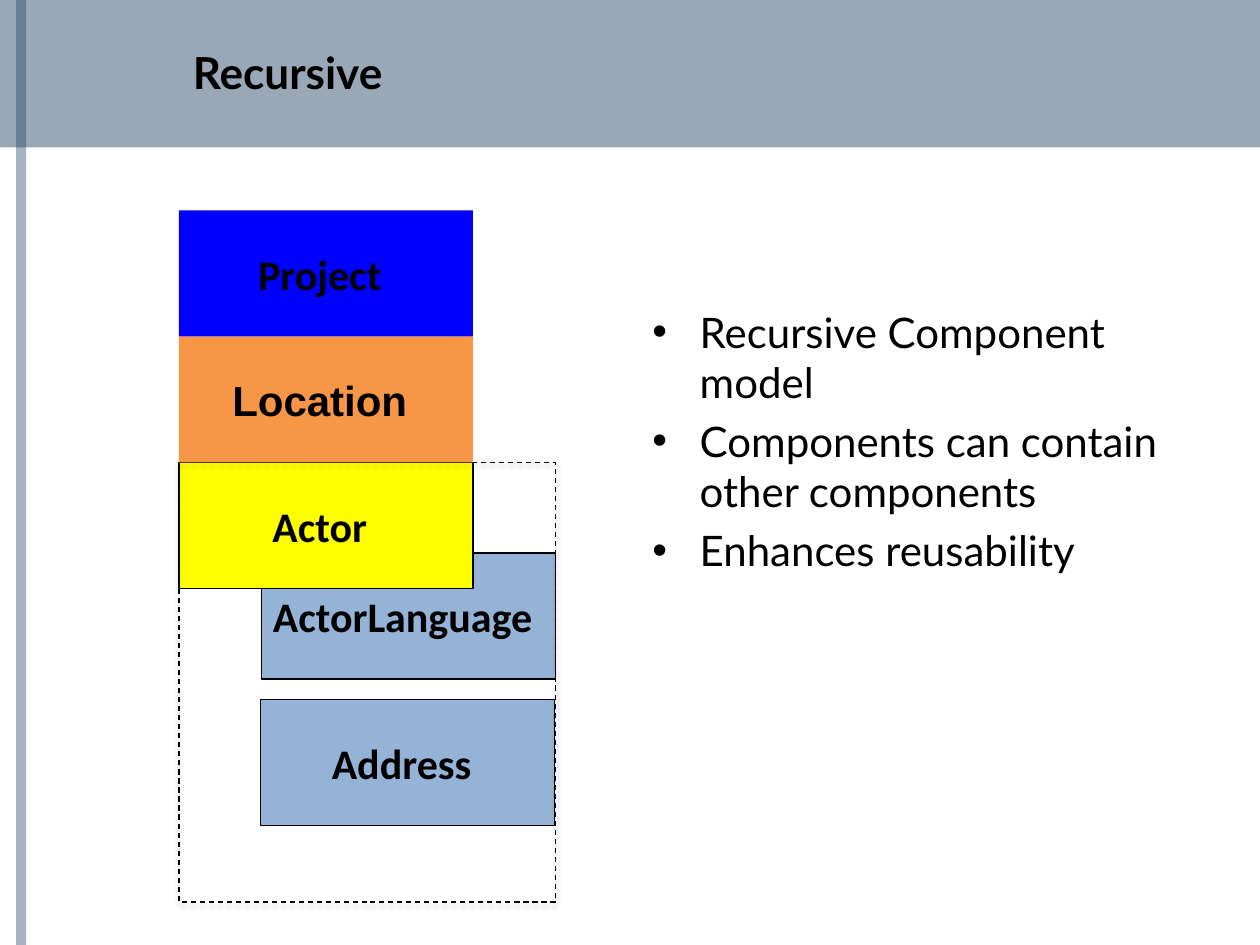
from lxml import etree
from pptx import Presentation
from pptx import util as u
from pptx.dml import color
from pptx.enum import dml, shapes, text
from pptx.oxml import ns

COLORS = {
    "band": "254061",
    "black": "000000",
    "project": "0000FF",
    "location": "F79646",
    "actor": "FFFF00",
    "detail": "95B3D7",
}
BOX_WIDTH, BOX_HEIGHT = 168, 72
STACK_LEFT, STACK_TOP = 102.24, 120.24
ACTOR_TOP = STACK_TOP + 2 * BOX_HEIGHT


def add_element(parent, tag, **attributes):
    return etree.SubElement(parent, ns.qn(tag), attributes)


class SlideBuilder:
    heading = {"name": "Lato", "size": u.Pt(25.2), "bold": True}
    body = {"name": "Lato", "size": u.Pt(24), "bold": False}
    label = {"name": "Calibri", "size": u.Pt(24), "bold": True}

    def __init__(self, presentation):
        self.slide = presentation.slides.add_slide(presentation.slide_layouts[5])

    def rgb(self, name):
        return color.RGBColor.from_string(COLORS[name])

    def set_font(self, font, style):
        for attribute, value in style.items():
            setattr(font, attribute, value)
        font.color.rgb = self.rgb("black")

    def set_frame(self, frame, **values):
        for attribute, value in values.items():
            setattr(frame, attribute, value)

    def rectangle(self, left, top, width, height, fill=None, outlined=False):
        shape = self.slide.shapes.add_shape(
            shapes.MSO_SHAPE.RECTANGLE, u.Pt(left), u.Pt(top), u.Pt(width), u.Pt(height))
        shape.shadow.inherit = False
        if fill:
            shape.fill.solid()
            shape.fill.fore_color.rgb = self.rgb(fill)
        else:
            shape.fill.background()
        if outlined:
            shape.line.color.rgb = self.rgb("black")
            shape.line.width = u.Pt(0.75)
        else:
            shape.line.fill.background()
        return shape

    def band(self, left, top, width, height, opacity):
        shape = self.rectangle(left, top, width, height, "band")
        fill_color = shape.element.spPr.find(".//" + ns.qn("a:srgbClr"))
        add_element(fill_color, "a:alpha", val=str(opacity * 1000))

    def component(self, name, left, top, fill, outlined=True, font_name="Calibri"):
        shape = self.rectangle(left, top, BOX_WIDTH, BOX_HEIGHT, fill, outlined)
        self.set_frame(
            shape.text_frame, word_wrap=True, vertical_anchor=text.MSO_ANCHOR.MIDDLE,
            margin_left=0, margin_right=u.Pt(7.2),
            margin_top=u.Pt(3.6), margin_bottom=u.Pt(3.6))
        paragraph = shape.text_frame.paragraphs[0]
        paragraph.text = name
        paragraph.alignment = text.PP_ALIGN.CENTER
        self.set_font(paragraph.font, {**self.label, "name": font_name})

    def dashed_group(self, left, top, width, height):
        shape = self.rectangle(left, top, width, height, outlined=True)
        shape.line.dash_style = dml.MSO_LINE.DASH
        effects = shape.element.spPr.find(ns.qn("a:effectLst"))
        shadow = add_element(
            effects, "a:outerShdw", blurRad=str(u.Pt(3.1)), dist=str(u.Pt(1.8)),
            dir="5400000", rotWithShape="0")
        shadow_color = add_element(shadow, "a:srgbClr", val=COLORS["black"])
        add_element(shadow_color, "a:alpha", val="35000")

    def title(self, wording, left, top, width, height):
        shape = self.slide.shapes.title
        shape.left, shape.top = u.Pt(left), u.Pt(top)
        shape.width, shape.height = u.Pt(width), u.Pt(height)
        self.set_frame(
            shape.text_frame, text=wording, word_wrap=True,
            auto_size=text.MSO_AUTO_SIZE.NONE, vertical_anchor=text.MSO_ANCHOR.MIDDLE)
        paragraph = shape.text_frame.paragraphs[0]
        paragraph.alignment = text.PP_ALIGN.LEFT
        self.set_font(paragraph.font, self.heading)
        shape.element.getparent().append(shape.element)

    def bullets(self, items, left, top, width, height):
        shape = self.slide.shapes.add_textbox(
            u.Pt(left), u.Pt(top), u.Pt(width), u.Pt(height))
        frame = shape.text_frame
        frame.word_wrap = True
        for index, item in enumerate(items):
            paragraph = frame.add_paragraph() if index else frame.paragraphs[0]
            paragraph.text = item
            if index:
                paragraph.space_before = u.Pt(4.8)
            properties = paragraph._p.get_or_add_pPr()
            properties.set("marL", str(u.Pt(27)))
            properties.set("indent", str(u.Pt(-27)))
            add_element(properties, "a:buFont", typeface="Arial")
            add_element(properties, "a:buChar", char="•")
            self.set_font(paragraph.font, self.body)


def main():
    presentation = Presentation()
    presentation.slide_width, presentation.slide_height = u.Pt(720), u.Pt(540)
    builder = SlideBuilder(presentation)
    builder.band(0, 0, 720, 84.24, 46)
    builder.band(9.2, 0, 5.76, 540, 40)
    builder.component("ActorLanguage", 149.6, 316.08, "detail")
    builder.title("Recursive", 102.96, 21.6, 504.72, 38.88)
    builder.bullets(
        ["Recursive Component model", "Components can contain other components",
         "Enhances reusability"], 365.76, 171.36, 318.24, 311.04)
    builder.component("Actor", STACK_LEFT, ACTOR_TOP, "actor")
    builder.component("Address", 149.04, 399.6, "detail")
    builder.dashed_group(STACK_LEFT, ACTOR_TOP, 215.28, 251.28)
    builder.component(
        "Location", STACK_LEFT, STACK_TOP + BOX_HEIGHT, "location", False, "Arial")
    builder.component("Project", STACK_LEFT, STACK_TOP, "project", False)
    presentation.save("out.pptx")


if __name__ == "__main__":
    main()
